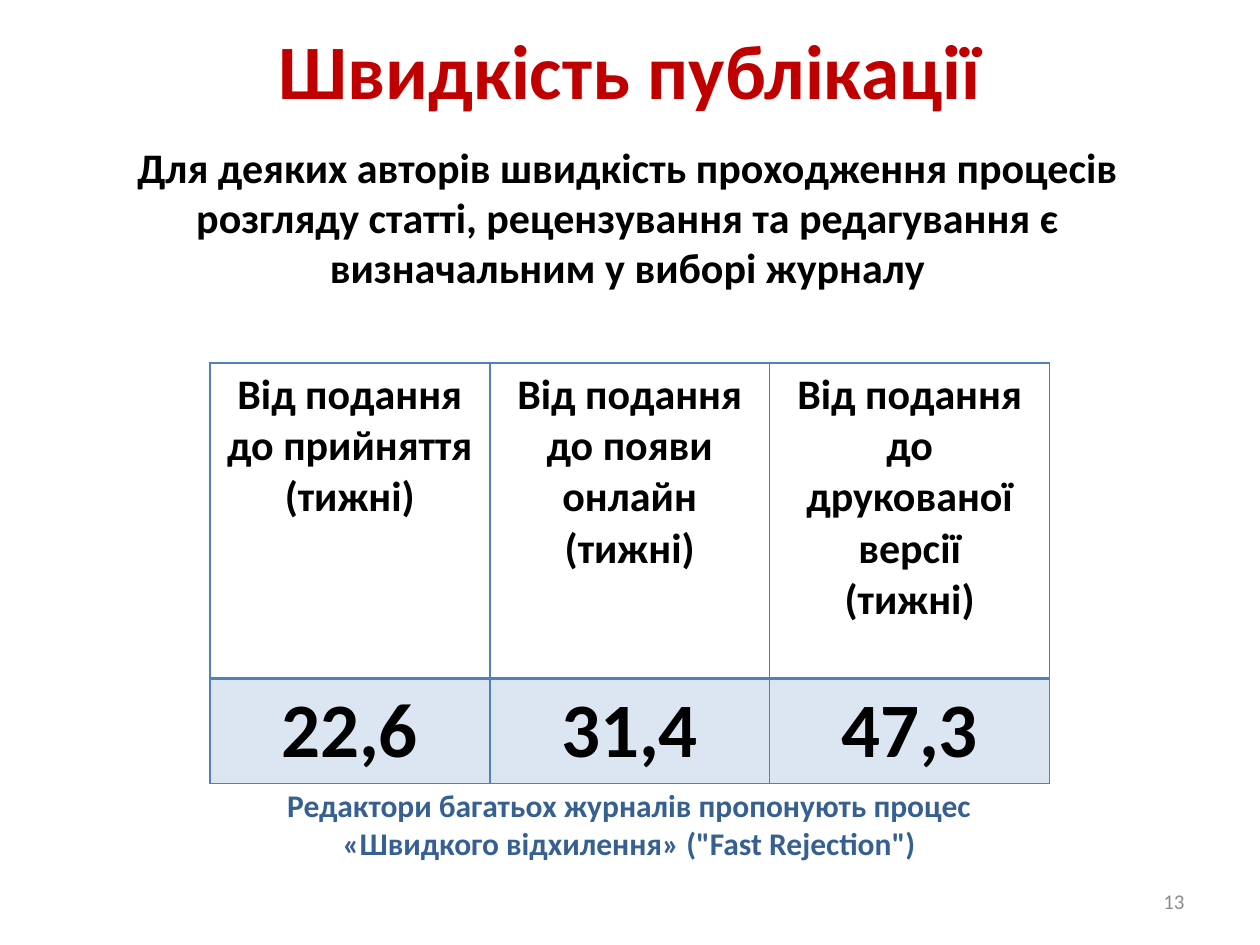
from dataclasses import dataclass

from lxml import etree
from pptx import Presentation
from pptx.dml.color import RGBColor
from pptx.enum.text import MSO_ANCHOR, PP_ALIGN
from pptx.oxml.ns import qn
from pptx.util import Cm, Pt

CENTER, RIGHT = PP_ALIGN.CENTER, PP_ALIGN.RIGHT
TOP, MIDDLE = MSO_ANCHOR.TOP, MSO_ANCHOR.MIDDLE
TITLE_ONLY = 5
FONT = "Calibri"
COLORS = {
    "title": "C00000",
    "text": "000000",
    "note": "376092",
    "number": "8C8C8C",
    "border": "4F81BD",
    "value_fill": "DCE6F2",
}


@dataclass
class Box:
    """Position and size in centimetres."""
    left: float
    top: float
    width: float
    height: float

    def lengths(self) -> tuple:
        return Cm(self.left), Cm(self.top), Cm(self.width), Cm(self.height)


@dataclass
class Duration:
    """One table column: a stage of publishing and its length in weeks."""
    stage: str
    weeks: str


DURATIONS = [
    Duration("Від подання до прийняття", "22,6"),
    Duration("Від подання до появи онлайн", "31,4"),
    Duration("Від подання до друкованої версії", "47,3"),
]
UNIT = "(тижні)"
HEADER_HEIGHT, VALUE_HEIGHT = 6.35, 2.12
TABLE_BOX = Box(4.23, 7.32, 16.93, HEADER_HEIGHT + VALUE_HEIGHT)


def write(frame, *lines: str, size: float, color: str = "text", bold: bool = True,
          align=CENTER) -> None:
    """Fill a text frame with one formatted paragraph for each line."""
    for index, line in enumerate(lines):
        para = frame.paragraphs[0] if index == 0 else frame.add_paragraph()
        para.alignment = align
        span = para.add_run()
        span.text = line
        span.font.name = FONT
        span.font.size = Pt(size)
        span.font.bold = bold
        span.font.color.rgb = RGBColor.from_string(COLORS[color])


def add_text(page, box: Box, text: str, anchor=TOP, **text_format) -> None:
    frame = page.shapes.add_textbox(*box.lengths()).text_frame
    frame.word_wrap = True
    frame.vertical_anchor = anchor
    write(frame, text, **text_format)


def set_borders(cell, **widths: float) -> None:
    """Draw cell borders; widths in points are keyed by side: L, R, T, B."""
    properties = cell._tc.get_or_add_tcPr()
    for side, width in widths.items():
        line = etree.SubElement(properties, qn(f"a:ln{side}"), w=str(Pt(width)))
        fill = etree.SubElement(line, qn("a:solidFill"))
        etree.SubElement(fill, qn("a:srgbClr"), val=COLORS["border"])


def add_durations(page, box: Box, durations: list[Duration]) -> None:
    table = page.shapes.add_table(2, len(durations), *box.lengths()).table
    table.first_row = table.horz_banding = False
    table.rows[0].height = Cm(HEADER_HEIGHT)
    table.rows[1].height = Cm(VALUE_HEIGHT)
    for column, duration in enumerate(durations):
        header, value = table.cell(0, column), table.cell(1, column)
        set_borders(header, L=1, R=1, T=1, B=2)
        header.fill.background()
        write(header.text_frame, duration.stage, UNIT, size=24)
        set_borders(value, L=1, R=1, T=2, B=1)
        value.fill.solid()
        value.fill.fore_color.rgb = RGBColor.from_string(COLORS["value_fill"])
        write(value.text_frame, duration.weeks, size=44)


def main() -> None:
    deck = Presentation()
    deck.slide_width, deck.slide_height = Cm(25.4), Cm(19.05)
    page = deck.slides.add_slide(deck.slide_layouts[TITLE_ONLY])

    # Title
    title = page.shapes.title
    title.left, title.top, title.width, title.height = Box(0, 0.33, 25.4, 2.13).lengths()
    title.text_frame.vertical_anchor = TOP
    write(title.text_frame, "Швидкість публікації", size=44, color="title")

    # Introduction
    add_text(page, Box(1.45, 2.72, 22.4, 3.33),
             "Для деяких авторів швидкість проходження процесів розгляду статті, "
             "рецензування та редагування є визначальним у виборі журналу", size=24)

    # Table of publication times
    add_durations(page, TABLE_BOX, DURATIONS)

    # Note and page number
    add_text(page, Box(4.29, 15.72, 16.79, 1.8),
             "Редактори багатьох журналів пропонують процес "
             "«Швидкого відхилення» (\"Fast Rejection\")", size=18, color="note")
    add_text(page, Box(18.21, 17.65, 5.92, 1.02), "13", anchor=MIDDLE,
             size=12, color="number", bold=False, align=RIGHT)

    deck.save("out.pptx")


if __name__ == "__main__":
    main()
